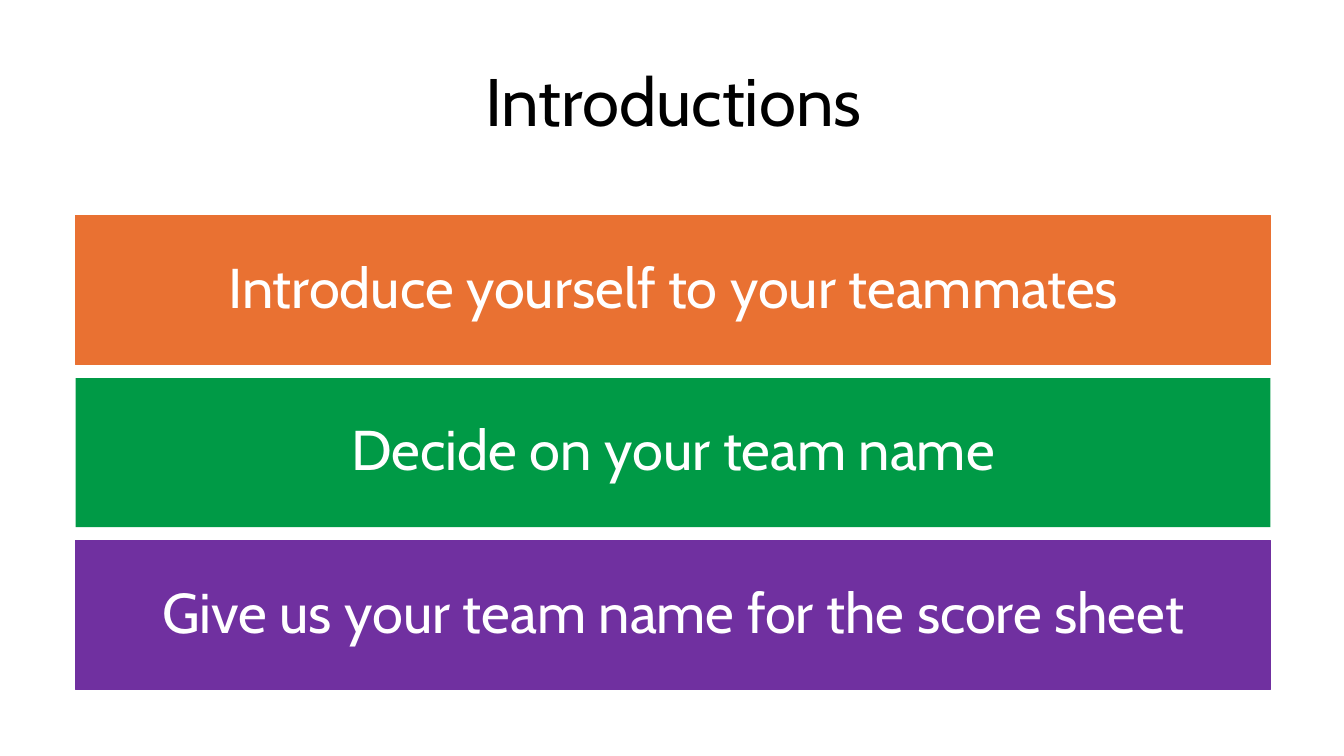
from pptx import Presentation
from pptx.dml.color import RGBColor
from pptx.enum.shapes import MSO_SHAPE
from pptx.enum.text import MSO_ANCHOR, MSO_AUTO_SIZE, PP_ALIGN
from pptx.util import Inches, Pt

RECTANGLE = MSO_SHAPE.RECTANGLE
MIDDLE, BOTTOM = MSO_ANCHOR.MIDDLE, MSO_ANCHOR.BOTTOM
CENTER = PP_ALIGN.CENTER
NO_AUTOFIT = MSO_AUTO_SIZE.NONE
FONT = "Cabin"
COLORS = {
    "black": "000000",
    "white": "FFFFFF",
    "orange": "E97132",
    "green": "009A46",
    "purple": "7030A0",
}


def color(name):
    return RGBColor.from_string(COLORS[name])


def write_centered(frame, text, size, color_name):
    frame.word_wrap = True
    frame.auto_size = NO_AUTOFIT
    para = frame.paragraphs[0]
    para.text = text
    para.alignment = CENTER
    para.line_spacing = 0.9
    para.font.name = FONT
    para.font.size = Pt(size)
    para.font.bold = False
    para.font.color.rgb = color(color_name)


deck = Presentation()
deck.slide_width, deck.slide_height = Inches(13.33), Inches(7.5)
page = deck.slides.add_slide(deck.slide_layouts[5])

# Title
title = page.shapes.title
title.left, title.top = Inches(4.33), Inches(0.66)
title.width, title.height = Inches(4.7), Inches(0.79)
title.text_frame.vertical_anchor = BOTTOM
write_centered(title.text_frame, "Introductions", 48, "black")

# Stacked step bars: text, fill, outline width
STEPS = [
    ("Introduce yourself to your teammates", "orange", 0.75),
    ("Decide on your team name", "green", 0),
    ("Give us your team name for the score sheet", "purple", 0.75),
]
FIRST_TOP, PITCH = 2.14, 1.61

for index, (text, fill, outline) in enumerate(STEPS):
    bar = page.shapes.add_shape(
        RECTANGLE, Inches(0.75), Inches(FIRST_TOP + index * PITCH),
        Inches(11.85), Inches(1.48))
    bar.shadow.inherit = False
    bar.fill.solid()
    bar.fill.fore_color.rgb = color(fill)
    if outline:
        bar.line.color.rgb = color(fill)
        bar.line.width = Pt(outline)
    else:
        bar.line.fill.background()

    frame = bar.text_frame
    frame.vertical_anchor = MIDDLE
    frame.margin_left = frame.margin_right = Inches(0.17)
    frame.margin_top = frame.margin_bottom = Inches(0.17)
    write_centered(frame, text, 40, "white")

deck.save("out.pptx")
